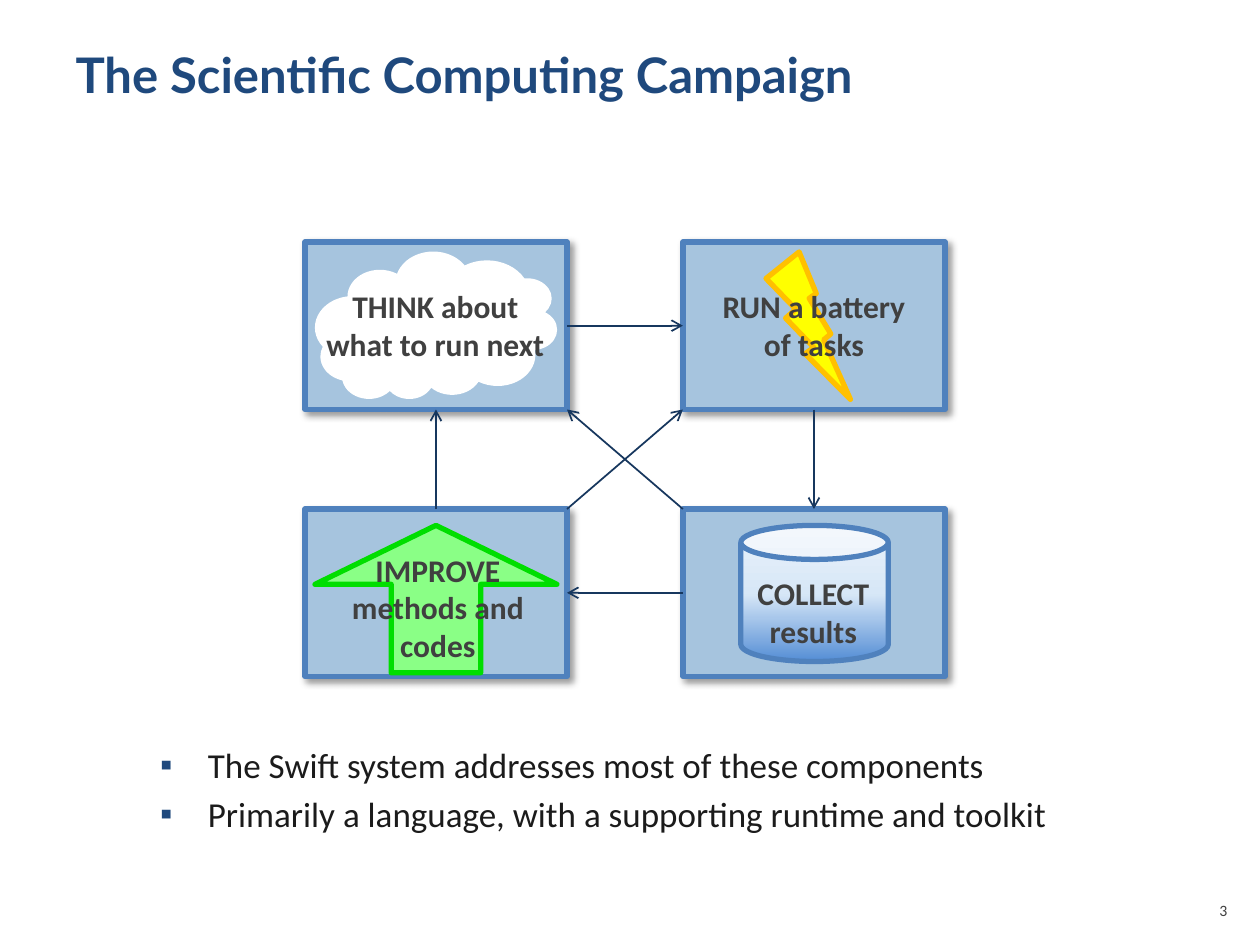
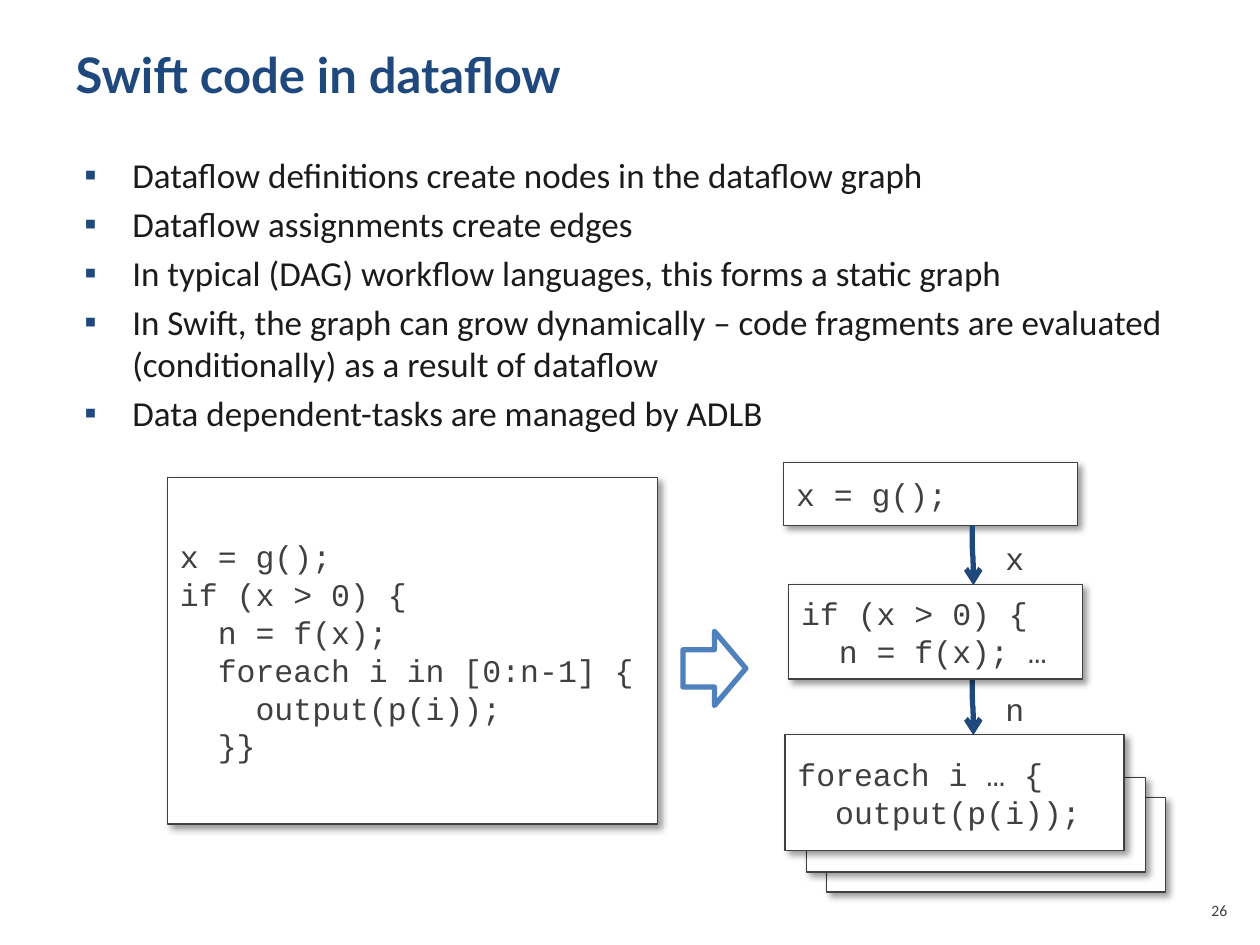
from pptx import Presentation
from pptx.dml.color import RGBColor
from pptx.enum.shapes import MSO_CONNECTOR as LINK, MSO_SHAPE as FORM
from pptx.enum.text import MSO_ANCHOR as ANCHOR, MSO_AUTO_SIZE as FIT, PP_ALIGN as ALIGN
from pptx.oxml.ns import qn
from pptx.util import Emu, Inches, Pt
from lxml.etree import SubElement

COLORS = {
    "navy": "1F497D", "ink": "1B1B1B", "gray": "404040", "link": "17375E",
    "edge": "4F81BD", "panel": "A6C4DE", "white": "FFFFFF", "black": "000000",
    "yellow": "FFFF00", "amber": "FFC000", "lime": "8AFF86", "green": "00DE00",
    "can_low": "558ED5", "can_mid": "D7E7F7", "can_top": "EBF3FB",
}
STYLES = {
    "title": ({"name": "Lato", "size": Pt(28), "bold": True}, "navy"),
    "bullet": ({"name": "Calibri", "size": Pt(20)}, "ink"),
    "step": ({"name": "Calibri", "size": Pt(18), "bold": True}, "gray"),
    "code": ({"name": "Courier New", "size": Pt(18)}, "gray"),
    "number": ({"name": "Calibri", "size": Pt(9)}, "gray"),
}
TOP, LEFT, BOTTOM, RIGHT = range(4)
STEP_W, STEP_H = 2.08, 1.33
STEP_COLS, STEP_ROWS = (2.42, 5.42), (1.92, 4.04)


def rgb(name):
    return RGBColor.from_string(COLORS[name])


def assign(target, values):
    for key, value in values.items():
        setattr(target, key, value)


def place(shape, box):
    assign(shape, dict(zip(("left", "top", "width", "height"), map(Inches, box))))


def write(frame, lines, style, align=ALIGN.LEFT, anchor=ANCHOR.TOP, wrap=True):
    assign(frame, {"auto_size": FIT.NONE, "word_wrap": wrap, "vertical_anchor": anchor})
    values, color = STYLES[style]
    for index, line in enumerate(lines):
        paragraph = frame.add_paragraph() if index else frame.paragraphs[0]
        paragraph.alignment = align
        run = paragraph.add_run()
        run.text = line
        assign(run.font, values)
        run.font.color.rgb = rgb(color)


def add_label(slide, box, lines, style, **layout):
    label = slide.shapes.add_textbox(*map(Inches, box))
    write(label.text_frame, lines, style, **layout)


def add_form(slide, form, box, fill=None, line=None, width=3, shadow=False):
    shape = slide.shapes.add_shape(form, *map(Inches, box))
    shape.shadow.inherit = False
    if fill:
        shape.fill.solid()
        shape.fill.fore_color.rgb = rgb(fill)
    else:
        shape.fill.background()
    if line:
        shape.line.color.rgb = rgb(line)
        shape.line.width = Pt(width)
    else:
        shape.line.fill.background()
    if shadow:
        add_shadow(shape)
    return shape


def add_shadow(shape):
    effects = shape.element.spPr.find(qn("a:effectLst"))
    outer = SubElement(effects, qn("a:outerShdw"), blurRad=str(Pt(4)), dist=str(Pt(3)),
                       dir=str(45 * 60000), algn="tl", rotWithShape="0")
    color = SubElement(outer, qn("a:srgbClr"), val=COLORS["black"])
    SubElement(color, qn("a:alpha"), val="40000")


def add_arrow(slide, start, end, color="link", width=1, kind=LINK.STRAIGHT):
    arrow = slide.shapes.add_connector(kind, *map(Inches, (*start, *end)))
    arrow.line.color.rgb = rgb(color)
    arrow.line.width = Pt(width)
    properties = arrow.element.spPr
    SubElement(properties.find(qn("a:ln")), qn("a:tailEnd"), type="arrow")
    SubElement(properties, qn("a:effectLst"))
    return arrow


def join_steps(slide, source, source_side, target, target_side):
    arrow = add_arrow(slide, (0, 0), (1, 1))
    arrow.begin_connect(source, source_side)
    arrow.end_connect(target, target_side)


def add_edge(slide, top, bottom, variable):
    center, middle, half = 7.72, (top + bottom) / 2, (bottom - top) / 2
    edge = add_arrow(slide, (center + half, middle), (center - half, middle + 0.01),
                     "navy", 3, LINK.CURVE)
    edge.element.spPr.find(qn("a:xfrm")).set("rot", str(270 * 60000))
    add_label(slide, (7.88, top + 0.06, 0.35, 0.4), [variable], "code", wrap=False)


def add_code(slide, box, lines=()):
    panel = add_form(slide, FORM.RECTANGLE, box, "white", "gray", 0.75, shadow=True)
    write(panel.text_frame, lines, "code", anchor=ANCHOR.MIDDLE)


def add_can(slide, box):
    can = add_form(slide, FORM.CAN, box, line="edge")
    can.fill.gradient()
    can.fill.gradient_angle = 90
    stops = can.element.spPr.find(qn("a:gradFill")).find(qn("a:gsLst"))
    stops.clear()
    for percent, color in ((0, "can_low"), (50, "can_mid"), (100, "can_top")):
        stop = SubElement(stops, qn("a:gs"), pos=str(percent * 1000))
        SubElement(stop, qn("a:srgbClr"), val=COLORS[color])


def fill_bullets(body, box, lines):
    place(body, box)
    write(body.text_frame, lines, "bullet")
    for index, paragraph in enumerate(body.text_frame.paragraphs):
        properties = paragraph._p.get_or_add_pPr()
        properties.set("marL", str(Inches(0.38)))
        properties.set("indent", str(-Inches(0.38)))
        color = SubElement(properties, qn("a:buClr"))
        SubElement(color, qn("a:srgbClr"), val=COLORS["navy"])
        SubElement(properties, qn("a:buChar"), char="▪")
        paragraph.space_before = Pt(4 if index else 0)


def add_page(deck, title, number, bullet_box, bullets):
    slide = deck.slides.add_slide(deck.slide_layouts[1])
    heading, body = slide.placeholders
    place(heading, (0.5, 0.3, 9, 1.25))
    write(heading.text_frame, [title], "title")
    fill_bullets(body, bullet_box, bullets)
    add_label(slide, (9.42, 7.1, 0.42, 0.4), [number], "number", align=ALIGN.RIGHT)
    return slide


def build_campaign(deck):
    slide = add_page(deck, "The Scientific Computing Campaign", "3", (1.17, 5.85, 7.67, 0.9), [
        "The Swift system addresses most of these components",
        "Primarily a language, with a supporting runtime and toolkit",
    ])
    think, run, improve, collect = [
        add_form(slide, FORM.RECTANGLE, (x, y, STEP_W, STEP_H), "panel", "edge", shadow=True)
        for y in STEP_ROWS for x in STEP_COLS]
    join_steps(slide, think, RIGHT, run, LEFT)
    join_steps(slide, run, BOTTOM, collect, TOP)
    join_steps(slide, collect, LEFT, improve, RIGHT)
    join_steps(slide, improve, TOP, think, BOTTOM)

    cloud = add_form(slide, FORM.CLOUD, (2.5, 2, 1.92, 1.17), "white")
    cloud.rotation = 180
    add_form(slide, FORM.LIGHTNING_BOLT, (6.08, 2, 0.67, 1.17), "yellow", "amber")
    add_can(slide, (5.88, 4.17, 1.17, 1.08))
    growth = add_form(slide, FORM.UP_ARROW, (2.5, 4.17, 1.92, 1.17), "lime", "green")
    growth.adjustments[0], growth.adjustments[1] = 0.37, 0.4

    for box, lines in (
        ((2.43, 2.23, 2.05, 0.71), ["THINK about what to run next"]),
        ((5.42, 2.23, 2.08, 0.71), ["RUN a battery", "of tasks"]),
        ((5.83, 4.51, 1.25, 0.71), ["COLLECT results"]),
        ((2.6, 4.32, 1.75, 1.01), ["IMPROVE methods and codes"]),
    ):
        add_label(slide, box, lines, "step", align=ALIGN.CENTER)

    inner_left, inner_right = STEP_COLS[0] + STEP_W, STEP_COLS[1]
    upper, lower = STEP_ROWS[0] + STEP_H, STEP_ROWS[1]
    add_arrow(slide, (inner_left, lower), (inner_right, upper))
    add_arrow(slide, (inner_right, lower), (inner_left, upper))


def build_dataflow(deck):
    slide = add_page(deck, "Swift code in dataflow", "26", (0.57, 1.17, 9, 2.5), [
        "Dataflow definitions create nodes in the dataflow graph",
        "Dataflow assignments create edges",
        "In typical (DAG) workflow languages, this forms a static graph",
        "In Swift, the graph can grow dynamically – code fragments are evaluated "
        "(conditionally) as a result of dataflow",
        "Data dependent-tasks are managed by ADLB",
    ])
    for top in (6.33, 6.17):
        add_code(slide, (top + 0.23, top, 2.69, 0.75))
    add_code(slide, (1.33, 3.79, 3.89, 2.75), [
        "x = g();",
        "if (x > 0) {",
        "  n = f(x);",
        "  foreach i in [0:n-1] {",
        "    output(p(i));",
        "  }}",
    ])
    add_form(slide, FORM.RIGHT_ARROW, (5.42, 5.01, 0.5, 0.59), line="edge")
    add_code(slide, (6.22, 3.67, 2.33, 0.5), ["x = g();"])
    add_code(slide, (6.23, 5.83, 2.69, 0.92), ["foreach i … {", "  output(p(i));"])
    add_edge(slide, 4.17, 4.64, "x")
    add_edge(slide, 5.37, 5.83, "n")
    add_code(slide, (6.26, 4.64, 2.33, 0.75), ["if (x > 0) {", "  n = f(x); …"])


def main():
    deck = Presentation()
    assign(deck, {"slide_width": Inches(10), "slide_height": Inches(7.5)})
    build_campaign(deck)
    build_dataflow(deck)
    deck.save("out.pptx")


if __name__ == "__main__":
    main()
